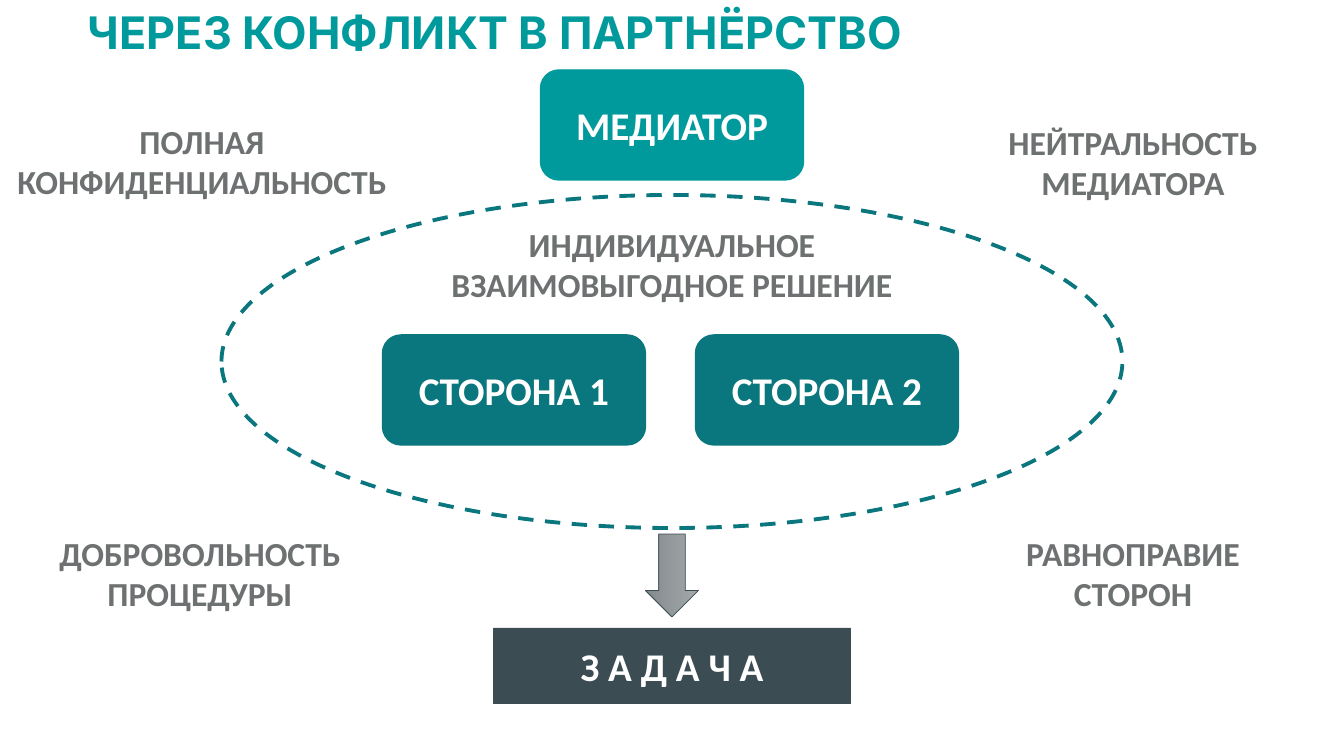
from pptx import Presentation
from pptx.dml.color import RGBColor
from pptx.enum.dml import MSO_LINE
from pptx.enum.shapes import MSO_SHAPE
from pptx.enum.text import MSO_ANCHOR, PP_ALIGN
from pptx.util import Pt

TEAL = RGBColor(0x00, 0x9A, 0x9D)
DEEP_TEAL = RGBColor(0x0A, 0x76, 0x7D)
SLATE = RGBColor(0x3B, 0x4C, 0x53)
GREY = RGBColor(0x6E, 0x71, 0x71)
ARROW_LIGHT = RGBColor(0xA3, 0xA8, 0xAA)
ARROW_DARK = RGBColor(0x84, 0x8B, 0x8E)
WHITE = RGBColor(0xFF, 0xFF, 0xFF)

# Content: lengths in px, 100.8 px to the inch
SLIDE_W, SLIDE_H = 1344, 756
CENTRE = SLIDE_W // 2
TITLE = "ЧЕРЕЗ КОНФЛИКТ В ПАРТНЁРСТВО"
ROLE_SIZE = (263, 110)
ROLES = [  # text, centre x, top, colour
    ("МЕДИАТОР", CENTRE, 70, TEAL),
    ("СТОРОНА 1", 514, 335, DEEP_TEAL),
    ("СТОРОНА 2", 827, 335, DEEP_TEAL),
]
TASK = "З А Д А Ч А"
PRINCIPLE_H = 92
PRINCIPLES = [  # lines, centre x, top, width
    (("ИНДИВИДУАЛЬНОЕ", "ВЗАИМОВЫГОДНОЕ РЕШЕНИЕ"), CENTRE, 219, 466),
    (("ПОЛНАЯ", "КОНФИДЕНЦИАЛЬНОСТЬ"), 202, 116, 402),
    (("НЕЙТРАЛЬНОСТЬ", "МЕДИАТОРА"), 1133, 117, 280),
    (("ДОБРОВОЛЬНОСТЬ", "ПРОЦЕДУРЫ"), 200, 528, 304),
    (("РАВНОПРАВИЕ", "СТОРОН"), 1133, 528, 236),
]


def px(length):
    return round(length * 914400 / 100.8)


def box(centre, top, width, height):
    return [px(v) for v in (centre - width / 2, top, width, height)]


def write(shape, lines, size, color, font="Calibri", align=PP_ALIGN.CENTER):
    paragraph = shape.text_frame.paragraphs[0]
    paragraph.alignment = align
    for i, line in enumerate(lines):
        if i:
            paragraph.add_line_break()
        run = paragraph.add_run()
        run.text = line
        run.font.name = font
        run.font.size = Pt(size)
        run.font.bold = True
        run.font.color.rgb = color


def add_block(kind, place, fill, line, line_width):
    block = slide.shapes.add_shape(kind, *place)
    block.shadow.inherit = False
    if fill is None:
        block.fill.background()
    else:
        block.fill.solid()
        block.fill.fore_color.rgb = fill
    block.line.color.rgb = line
    block.line.width = Pt(line_width)
    block.text_frame.vertical_anchor = MSO_ANCHOR.MIDDLE
    return block


prs = Presentation()
prs.slide_width, prs.slide_height = px(SLIDE_W), px(SLIDE_H)
slide = prs.slides.add_slide(prs.slide_layouts[6])

# Title
title = slide.shapes.add_textbox(px(78), px(8), px(1252), px(54))
title.text_frame.word_wrap = True
title.text_frame.vertical_anchor = MSO_ANCHOR.MIDDLE
write(title, [TITLE], 32, TEAL, "Inter", PP_ALIGN.LEFT)
title.text_frame.paragraphs[0].line_spacing = 0.9

# Arrow from the agreement down to the task
arrow = add_block(MSO_SHAPE.DOWN_ARROW, box(CENTRE, 534, 53, 83), None, SLATE, 0.5)
arrow.fill.gradient()
arrow.fill.gradient_angle = 180
for stop, shade in zip(arrow.fill.gradient_stops, (ARROW_LIGHT, ARROW_DARK)):
    stop.color.rgb = shade

# Task bar
task = add_block(MSO_SHAPE.RECTANGLE, box(CENTRE, 628, 357, 75), SLATE, SLATE, 0.5)
write(task, [TASK], 28, WHITE)

# Dashed field of agreement
field = add_block(MSO_SHAPE.OVAL, box(CENTRE, 195, 901, 333), None, DEEP_TEAL, 2.75)
field.line.dash_style = MSO_LINE.DASH

# Mediator and the two sides
for name, centre, top, color in ROLES:
    role = add_block(MSO_SHAPE.ROUNDED_RECTANGLE, box(centre, top, *ROLE_SIZE), color, color, 1)
    write(role, [name], 28, WHITE)

# Principles around the field
for lines, centre, top, width in PRINCIPLES:
    principle = slide.shapes.add_textbox(*box(centre, top, width, PRINCIPLE_H))
    principle.text_frame.word_wrap = False
    write(principle, lines, 24, GREY)

prs.save("out.pptx")
